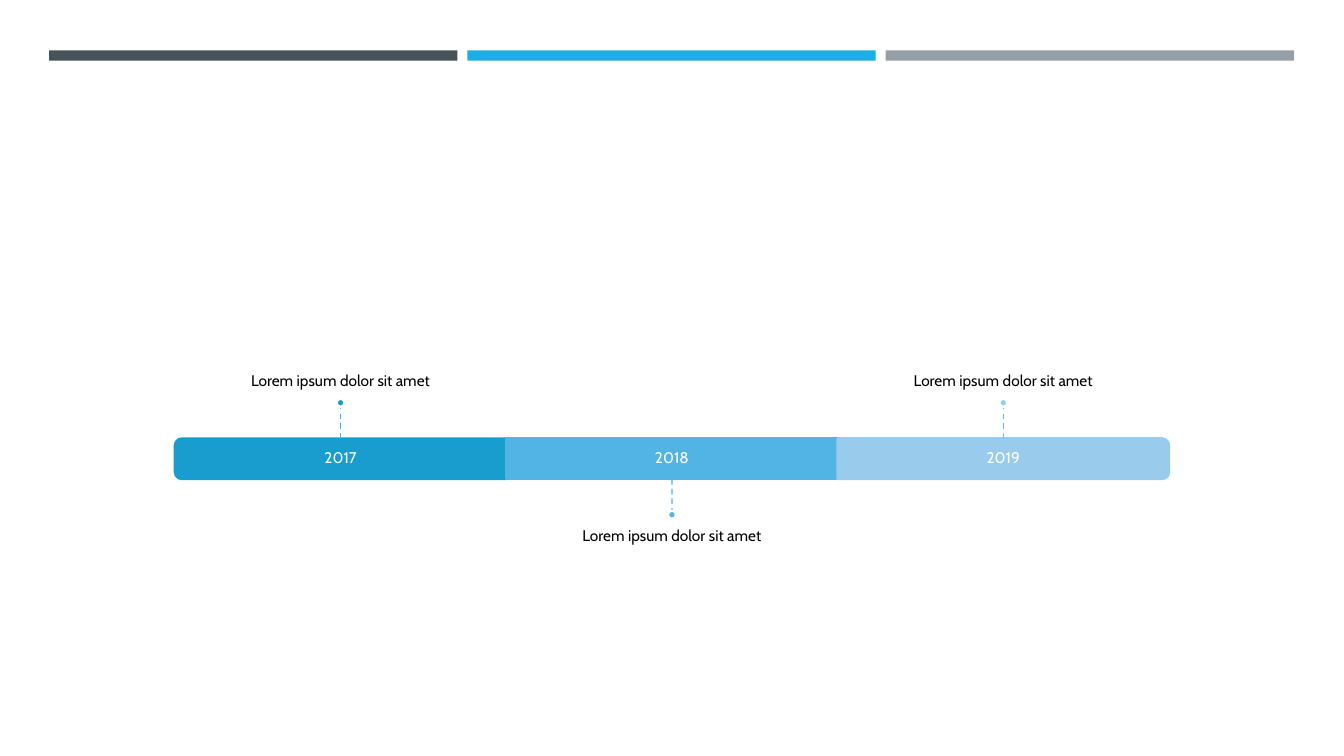
"""Build a three-year timeline slide with a tricolour header."""
from dataclasses import dataclass

from lxml.etree import SubElement
from pptx import Presentation
from pptx.dml.color import RGBColor
from pptx.enum.dml import MSO_LINE as Dash
from pptx.enum.shapes import MSO_CONNECTOR as Link, MSO_SHAPE as Kind
from pptx.enum.text import MSO_ANCHOR as Anchor, PP_ALIGN as Align
from pptx.oxml.ns import qn
from pptx.shapes.autoshape import Shape
from pptx.shapes.shapetree import SlideShapes
from pptx.util import Cm, Pt

WHITE = RGBColor(0xFF, 0xFF, 0xFF)
BLACK = RGBColor(0x00, 0x00, 0x00)
SLATE = RGBColor(0x46, 0x53, 0x59)
AZURE = RGBColor(0x1C, 0xAD, 0xE4)
GREY = RGBColor(0x96, 0x9F, 0xA7)
DEEP = RGBColor(0x19, 0x9D, 0xCF)
MID = RGBColor(0x52, 0xB3, 0xE5)
PALE = RGBColor(0x99, 0xCB, 0xEC)
STEM_A = RGBColor(0x36, 0xB3, 0xE9)
STEM_B = RGBColor(0x48, 0xB8, 0xEC)
STEM_C = RGBColor(0x5A, 0xBE, 0xEF)

FONT = "Cabin"
NOTE = "Lorem ipsum dolor sit amet"
WIDE, HIGH = 33.87, 19.05
BAR_W, BAR_H, BAR_TOP = 8.35, 1.02, 11.05
NOTE_W, NOTE_H = 13.92, 3.53
STEM, DOT, PAD = 0.8, 0.2, 0.23


@dataclass
class Box:
    left: float
    top: float
    width: float
    height: float

    def size(self) -> tuple[Cm, Cm, Cm, Cm]:
        """Give the box as lengths."""
        return Cm(self.left), Cm(self.top), Cm(self.width), Cm(self.height)


@dataclass
class Year:
    name: str
    fill: RGBColor
    stem: RGBColor
    turn: int
    above: bool


YEARS = [
    Year("2017", DEEP, STEM_A, 270, True),
    Year("2018", MID, STEM_B, 0, False),
    Year("2019", PALE, STEM_C, 90, True),
]


def add_form(shapes: SlideShapes, kind: Kind, box: Box, fill: RGBColor,
             edge: RGBColor | None = None) -> Shape:
    """Draw one filled shape."""
    form = shapes.add_shape(kind, *box.size())
    form.shadow.inherit = False
    form.fill.solid()
    form.fill.fore_color.rgb = fill
    if edge is None:
        form.line.fill.background()
    else:
        form.line.color.rgb = edge
        form.line.width = Pt(1.75)
    return form


def add_text(shapes: SlideShapes, text: str, box: Box, color: RGBColor,
             anchor: Anchor, pads: tuple[float, float, float]) -> None:
    """Write one centred line; pads are side, top and bottom."""
    frame = shapes.add_textbox(*box.size()).text_frame
    frame.word_wrap = True
    frame.vertical_anchor = anchor
    side, top, base = pads
    frame.margin_left = frame.margin_right = Cm(side)
    frame.margin_top, frame.margin_bottom = Cm(top), Cm(base)
    frame.text = text
    para = frame.paragraphs[0]
    para.alignment = Align.CENTER
    para.line_spacing = 0.9
    font = para.runs[0].font
    font.name, font.size = FONT, Pt(11)
    font.color.rgb = color


def add_stem(shapes: SlideShapes, mid: float, start: float, end: float,
             color: RGBColor, bar: Shape) -> None:
    """Draw a dashed stem from the bar to its dot."""
    stem = shapes.add_connector(Link.STRAIGHT, Cm(mid), Cm(start),
                                Cm(mid), Cm(end))
    stem.line.color.rgb = color
    stem.line.width = Pt(1)
    stem.line.dash_style = Dash.DASH
    SubElement(stem.element.spPr, qn("a:effectLst"))
    if not bar.rotation:
        stem.begin_connect(bar, 2)


def add_year(shapes: SlideShapes, year: Year, mid: float) -> None:
    """Draw one year with its bar, note, stem and dot."""
    area = Box(mid - BAR_W / 2, BAR_TOP, BAR_W, BAR_H)
    if year.turn:
        centre = BAR_TOP + BAR_H / 2
        upright = Box(mid - BAR_H / 2, centre - BAR_W / 2, BAR_H, BAR_W)
        bar = add_form(shapes, Kind.ROUND_2_SAME_RECTANGLE, upright,
                       year.fill, year.fill)
        bar.rotation = year.turn
    else:
        bar = add_form(shapes, Kind.RECTANGLE, area, year.fill, year.fill)
    add_text(shapes, year.name, area, WHITE, Anchor.MIDDLE, (PAD, PAD, PAD))

    if year.above:
        start, end = BAR_TOP, BAR_TOP - STEM
        dot = end - DOT
        top, anchor, pads = dot - NOTE_H, Anchor.BOTTOM, (0, 0, PAD)
    else:
        start = BAR_TOP + BAR_H
        dot = end = start + STEM
        top, anchor, pads = dot + DOT, Anchor.TOP, (0, PAD, 0)
    note = Box(mid - NOTE_W / 2, top, NOTE_W, NOTE_H)
    add_text(shapes, NOTE, note, BLACK, anchor, pads)
    add_stem(shapes, mid, start, end, year.stem, bar)
    add_form(shapes, Kind.OVAL, Box(mid - DOT / 2, dot, DOT, DOT),
             year.fill, WHITE)


def main() -> None:
    """Build and save the slide."""
    deck = Presentation()
    deck.slide_width, deck.slide_height = Cm(WIDE), Cm(HIGH)
    shapes = deck.slides.add_slide(deck.slide_layouts[6]).shapes
    for spot, color in enumerate((SLATE, AZURE, GREY)):
        strip = Box(1.24 + spot * 10.54, 1.27, 10.29, 0.26)
        add_form(shapes, Kind.RECTANGLE, strip, color)
    for spot, year in enumerate(YEARS):
        add_year(shapes, year, WIDE / 2 + (spot - 1) * BAR_W)
    deck.save("out.pptx")


if __name__ == "__main__":
    main()
